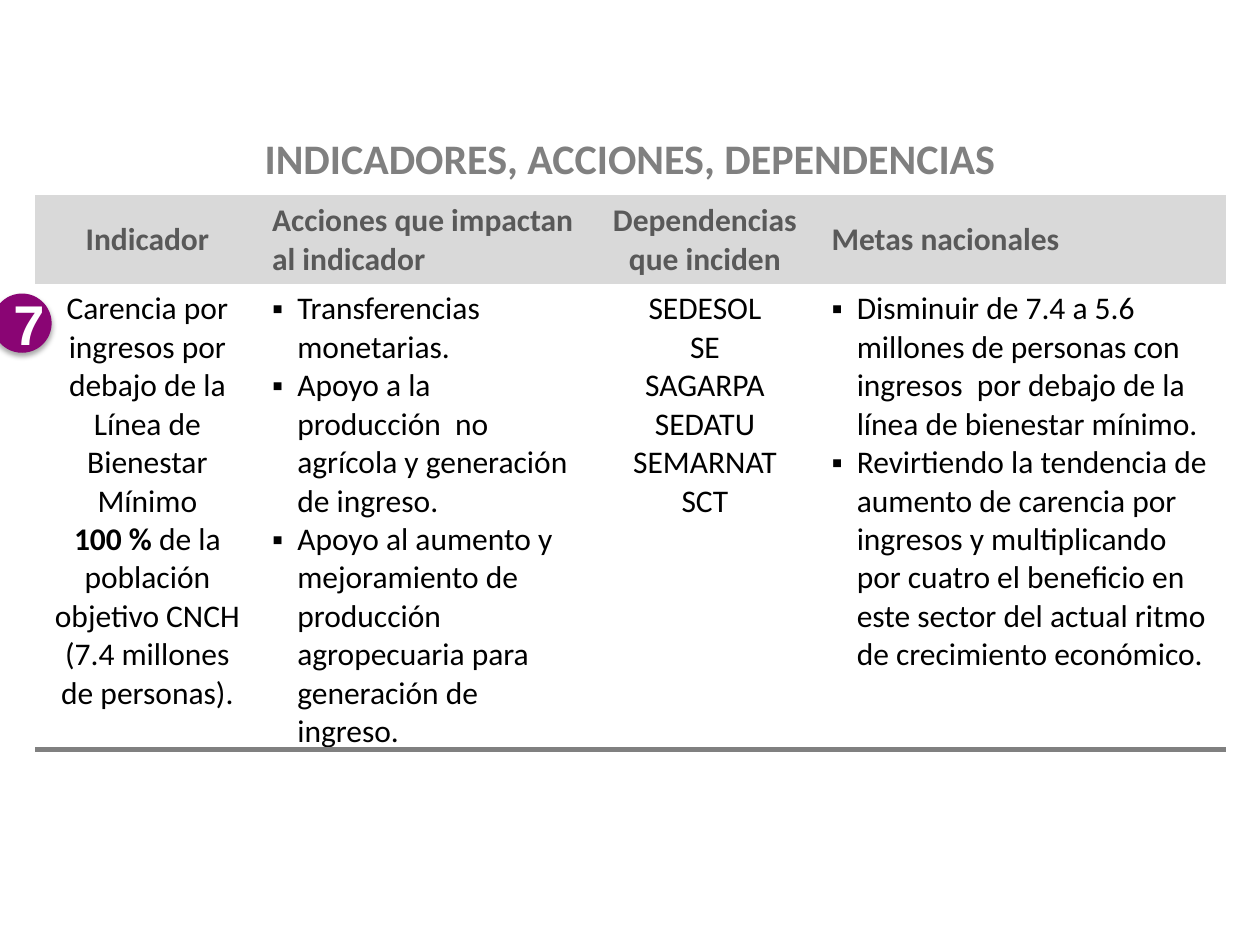
from dataclasses import dataclass

from lxml.etree import SubElement
from pptx import Presentation
from pptx.dml.color import RGBColor
from pptx.enum.shapes import MSO_SHAPE
from pptx.enum.text import MSO_ANCHOR, MSO_AUTO_SIZE, PP_ALIGN
from pptx.oxml import parse_xml
from pptx.oxml.ns import nsdecls, qn
from pptx.util import Inches, Pt


@dataclass(frozen=True)
class Theme:
    text_font: str = "Calibri"
    badge_font: str = "Arial"
    title_size: int = 24
    table_size: int = 18
    badge_size: int = 32
    gray: str = "808080"
    header_text: str = "595959"
    header_fill: str = "D9D9D9"
    body_text: str = "000000"
    badge_fill: str = "8A0574"
    badge_text: str = "FFFFFF"


THEME = Theme()
SLIDE_WIDTH, SLIDE_HEIGHT = Inches(10), Inches(7.5)
TABLE_LEFT, TABLE_TOP = Inches(0.28), Inches(1.55)
COLUMN_WIDTHS = [Inches(width) for width in (1.78, 2.63, 1.81, 3.23)]
ROW_HEIGHTS = [Inches(height) for height in (0.6, 2.13)]
BULLET_INDENT = Inches(0.2)
NO_TABLE_STYLE = "{2D5ABB26-0587-4C30-8999-92F81FD0307C}"

# Each column: heading, body paragraphs, whether the body is a bulleted list.
# A paragraph given as a pair starts with a bold part.
COLUMNS = [
    ("Indicador", [
        "Carencia por ingresos por debajo de la Línea de Bienestar Mínimo",
        ("100 % ", "de la población objetivo CNCH"),
        "(7.4 millones",
        "de personas).",
    ], False),
    ("Acciones que impactan al indicador", [
        "Transferencias monetarias.",
        "Apoyo a la producción  no agrícola y generación de ingreso.",
        "Apoyo al aumento y mejoramiento de producción agropecuaria para "
        "generación de ingreso.",
    ], True),
    ("Dependencias que inciden",
     ["SEDESOL", "SE", "SAGARPA", "SEDATU", "SEMARNAT", "SCT"], False),
    ("Metas nacionales", [
        "Disminuir de 7.4 a 5.6  millones de personas con ingresos  por debajo "
        "de la línea de bienestar mínimo.",
        "Revirtiendo la tendencia de aumento de carencia por ingresos y "
        "multiplicando por cuatro el beneficio en este sector del actual ritmo "
        "de crecimiento económico.",
    ], True),
]


def color(value):
    return RGBColor.from_string(value)


def style_font(font, name, size, value, bold=None):
    font.name, font.size, font.bold = name, Pt(size), bold
    font.color.rgb = color(value)


def add_bullet(paragraph):
    properties = paragraph._p.get_or_add_pPr()
    properties.set("marL", str(BULLET_INDENT))
    properties.set("indent", str(-BULLET_INDENT))
    SubElement(properties, qn("a:buFont"), typeface=THEME.badge_font)
    SubElement(properties, qn("a:buChar"), char="▪")


def add_bottom_border(cell, value, width):
    border = parse_xml(
        f'<a:lnB {nsdecls("a")} w="{Pt(width)}"><a:solidFill>'
        f'<a:srgbClr val="{value}"/></a:solidFill></a:lnB>')
    cell._tc.get_or_add_tcPr().insert(0, border)


def add_shadow(shape, blur, distance, opacity):
    """Cast a black shadow straight down; blur and distance are in points."""
    shape.shadow.inherit = False
    effects = shape._element.spPr.find(qn("a:effectLst"))
    effects.append(parse_xml(
        f'<a:outerShdw {nsdecls("a")} blurRad="{Pt(blur)}" dist="{Pt(distance)}" '
        f'dir="5400000" rotWithShape="0"><a:srgbClr val="000000">'
        f'<a:alpha val="{opacity * 1000}"/></a:srgbClr></a:outerShdw>'))


def fill_header(cell, heading, alignment):
    cell.fill.solid()
    cell.fill.fore_color.rgb = color(THEME.header_fill)
    cell.vertical_anchor = MSO_ANCHOR.MIDDLE
    paragraph = cell.text_frame.paragraphs[0]
    paragraph.text, paragraph.alignment = heading, alignment
    style_font(paragraph.font, THEME.text_font, THEME.table_size,
               THEME.header_text, True)


def fill_body(cell, entries, bulleted, alignment):
    cell.fill.background()
    add_bottom_border(cell, THEME.gray, 3)
    frame = cell.text_frame
    for index, entry in enumerate(entries):
        paragraph = frame.add_paragraph() if index else frame.paragraphs[0]
        paragraph.alignment = alignment
        if bulleted:
            add_bullet(paragraph)
        style_font(paragraph.font, THEME.text_font, THEME.table_size,
                   THEME.body_text)
        if isinstance(entry, str):
            paragraph.add_run().text = entry
        else:
            for part, bold in zip(entry, (True, False)):
                run = paragraph.add_run()
                run.text, run.font.bold = part, bold


def add_indicator_table(slide):
    table = slide.shapes.add_table(
        len(ROW_HEIGHTS), len(COLUMNS), TABLE_LEFT, TABLE_TOP,
        sum(COLUMN_WIDTHS), sum(ROW_HEIGHTS)).table
    table.horz_banding = False
    table._tbl.tblPr.find(qn("a:tableStyleId")).text = NO_TABLE_STYLE
    for row, height in zip(table.rows, ROW_HEIGHTS):
        row.height = height
    for index, (heading, entries, bulleted) in enumerate(COLUMNS):
        table.columns[index].width = COLUMN_WIDTHS[index]
        alignment = PP_ALIGN.LEFT if bulleted else PP_ALIGN.CENTER
        fill_header(table.cell(0, index), heading, alignment)
        fill_body(table.cell(1, index), entries, bulleted, alignment)


def add_number_badge(slide, number):
    diameter = Inches(0.47)
    badge = slide.shapes.add_shape(
        MSO_SHAPE.OVAL, Inches(-0.06), Inches(2.33), diameter, diameter)
    badge.fill.solid()
    badge.fill.fore_color.rgb = color(THEME.badge_fill)
    badge.line.fill.background()
    add_shadow(badge, blur=3.1, distance=1.8, opacity=35)
    paragraph = badge.text_frame.paragraphs[0]
    paragraph.text, paragraph.alignment = number, PP_ALIGN.CENTER
    style_font(paragraph.font, THEME.badge_font, THEME.badge_size,
               THEME.badge_text, True)


def set_title(slide, heading):
    title = slide.shapes.title
    title.left, title.top = 0, Inches(0.99)
    title.width, title.height = SLIDE_WIDTH, Inches(0.51)
    frame = title.text_frame
    frame.text = heading
    frame.word_wrap = True
    frame.auto_size = MSO_AUTO_SIZE.SHAPE_TO_FIT_TEXT
    frame.vertical_anchor = MSO_ANCHOR.BOTTOM
    paragraph = frame.paragraphs[0]
    paragraph.alignment = PP_ALIGN.CENTER
    style_font(paragraph.font, THEME.text_font, THEME.title_size,
               THEME.gray, True)


def main():
    presentation = Presentation()
    presentation.slide_width = SLIDE_WIDTH
    presentation.slide_height = SLIDE_HEIGHT
    slide = presentation.slides.add_slide(presentation.slide_layouts[5])
    set_title(slide, "INDICADORES, ACCIONES, DEPENDENCIAS")
    add_indicator_table(slide)
    add_number_badge(slide, "7")
    presentation.save("out.pptx")


if __name__ == "__main__":
    main()
